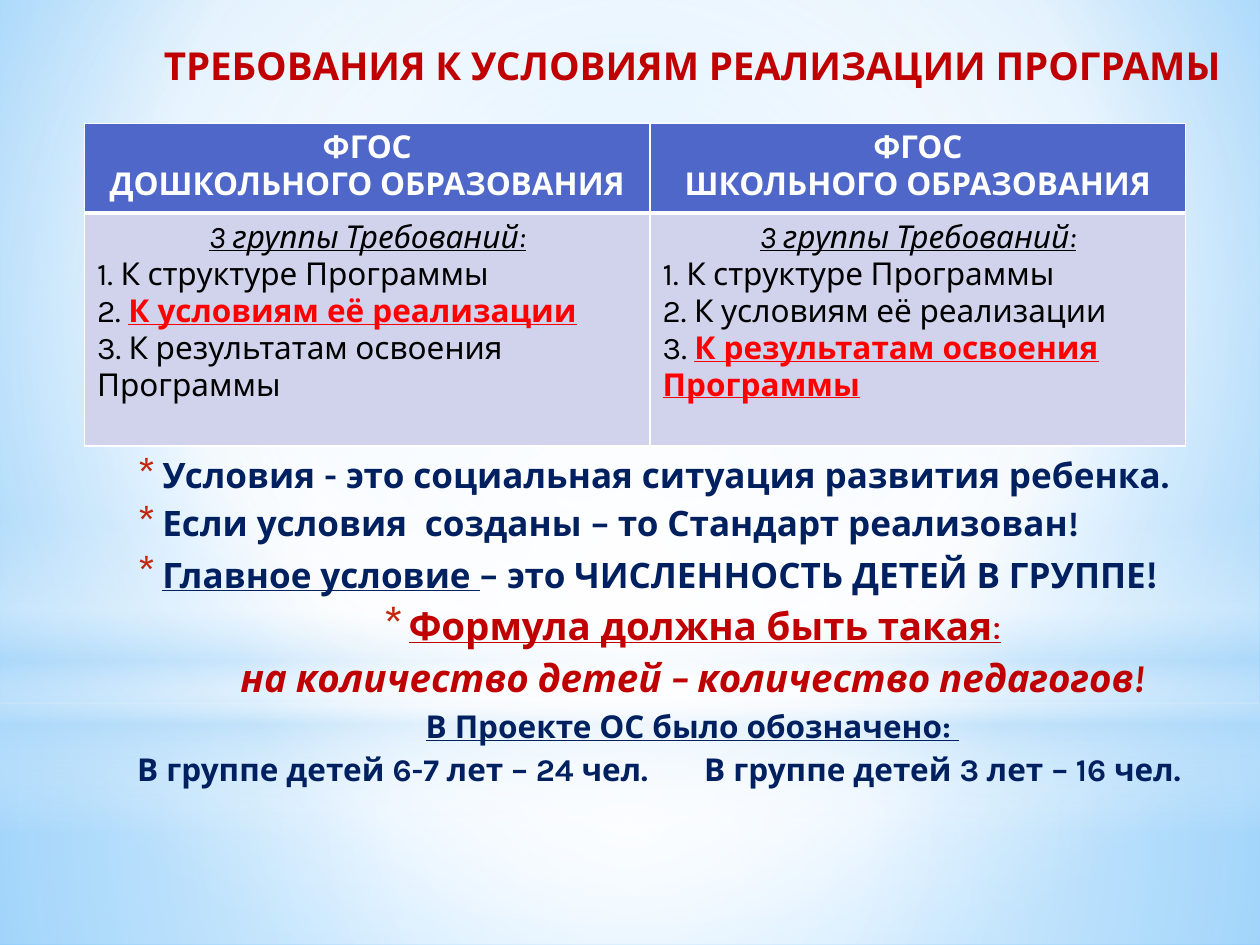
import dataclasses

import lxml.etree
import pptx
import pptx.dml.color
import pptx.enum.shapes
import pptx.enum.text
import pptx.oxml
import pptx.oxml.ns
import pptx.util

Inches = pptx.util.Inches
Pt = pptx.util.Pt
Align = pptx.enum.text.PP_ALIGN
Preset = pptx.enum.shapes.MSO_SHAPE
qn = pptx.oxml.ns.qn


@dataclasses.dataclass(frozen=True)
class Theme:
    font: str = "Karla"
    navy: str = "002060"
    crimson: str = "C00000"
    red: str = "FF0000"
    black: str = "000000"
    white: str = "FFFFFF"
    sky: str = "B4DCFA"
    bullet: str = "C3260C"
    header: str = "4E67C8"
    cell: str = "D0D3EB"
    title_size: int = 22
    body_size: int = 20
    small_size: int = 18


THEME = Theme()


def rgb(value):
    return pptx.dml.color.RGBColor.from_string(value)


def child(parent, tag, **attributes):
    return lxml.etree.SubElement(
        parent, qn(tag), {name: str(value) for name, value in attributes.items()})


def apply_gradient(fill, stops, focus=None):
    fill.gradient()
    gradient = fill._fill._gradFill
    for element in list(gradient):
        gradient.remove(element)
    stop_list = child(gradient, "a:gsLst")
    for position, color, alpha in stops:
        stop = child(stop_list, "a:gs", pos=position * 1000)
        color_element = child(stop, "a:srgbClr", val=color)
        if alpha < 100:
            child(color_element, "a:alpha", val=alpha * 1000)
    if focus:
        edges = {edge: value * 1000 for edge, value in zip("ltrb", focus)}
        child(child(gradient, "a:path", path="circle"), "a:fillToRect", **edges)
    else:
        child(gradient, "a:lin", ang=90 * 60000, scaled=0)


class SlideBuilder:
    def __init__(self, presentation, theme):
        self.theme = theme
        self.slide = presentation.slides.add_slide(presentation.slide_layouts[5])

    def background(self, stops, focus):
        apply_gradient(self.slide.background.fill, stops, focus)

    def glow(self, preset, top, height, stops, focus=(50, 50, 50, 50)):
        shape = self.slide.shapes.add_shape(
            preset, 0, Inches(top), Inches(10), Inches(height))
        shape.shadow.inherit = False
        shape.line.fill.background()
        apply_gradient(shape.fill, stops, focus)

    def set_text(self, paragraph, parts, size, color, align=Align.LEFT):
        paragraph.alignment = align
        paragraph.text = parts[0][0]
        for text, _ in parts[1:]:
            paragraph.add_run().text = text
        for run, (_, style) in zip(paragraph.runs, parts):
            font = run.font
            font.name = self.theme.font
            font.size = Pt(style.get("size", size))
            font.bold = style.get("bold", False)
            font.italic = style.get("italic", False)
            font.underline = style.get("underline", False)
            font.color.rgb = rgb(style.get("color", color))

    def title(self, text):
        shape = self.slide.shapes.title
        shape.left, shape.top = Inches(0.94), Inches(0.28)
        shape.width, shape.height = Inches(9.06), Inches(0.52)
        frame = shape.text_frame
        frame.vertical_anchor = pptx.enum.text.MSO_ANCHOR.TOP
        self.set_text(frame.paragraphs[0], [(text, {"bold": True})],
                      self.theme.title_size, self.theme.crimson, Align.CENTER)
        frame.paragraphs[0]._p.get_or_add_pPr().set("marL", str(Inches(0.05)))
        self.slide.shapes._spTree.append(shape._element)

    def body(self, top, height, lines):
        box = self.slide.shapes.add_textbox(
            Inches(0.94), Inches(top), Inches(9.06), Inches(height))
        frame = box.text_frame
        frame.word_wrap = True
        for index, (parts, size, color, align, bulleted) in enumerate(lines):
            paragraph = frame.add_paragraph() if index else frame.paragraphs[0]
            self.set_text(paragraph, parts, size, color, align)
            paragraph.space_after = Pt(3.5)
            properties = paragraph._p.get_or_add_pPr()
            properties.set("marL", str(Inches(0.25 if bulleted else 0.05)))
            properties.set("indent", str(Inches(-0.2 if bulleted else 0)))
            if bulleted:
                child(child(properties, "a:buClr"), "a:srgbClr", val=self.theme.bullet)
                child(properties, "a:buSzPct", val=130000)
                child(properties, "a:buFont", typeface=self.theme.font)
                child(properties, "a:buChar", char="*")
            else:
                child(properties, "a:buNone")
                tabs = child(properties, "a:tabLst")
                child(tabs, "a:tab", pos=Inches(4.49), algn="l")

    def table(self, left, top, widths, heights, rows):
        table = self.slide.shapes.add_table(
            len(rows), len(widths), Inches(left), Inches(top),
            Inches(sum(widths)), Inches(sum(heights))).table
        for column, width in zip(table.columns, widths):
            column.width = Inches(width)
        for row, height in zip(table.rows, heights):
            row.height = Inches(height)
        for row_index, row in enumerate(rows):
            is_header = row_index == 0
            for column_index, lines in enumerate(row):
                cell = table.cell(row_index, column_index)
                self.cell_borders(cell, 3 if is_header else 1, 1 if is_header else 3)
                cell.fill.solid()
                cell.fill.fore_color.rgb = rgb(
                    self.theme.header if is_header else self.theme.cell)
                frame = cell.text_frame
                for index, parts in enumerate(lines):
                    paragraph = frame.add_paragraph() if index else frame.paragraphs[0]
                    centered = is_header or index == 0
                    self.set_text(paragraph, parts, self.theme.small_size,
                                  self.theme.white if is_header else self.theme.black,
                                  Align.CENTER if centered else Align.LEFT)

    def cell_borders(self, cell, bottom, top):
        properties = cell._tc.get_or_add_tcPr()
        for side, width in (("L", 1), ("R", 1), ("T", top), ("B", bottom)):
            line = child(properties, f"a:ln{side}", w=Pt(width))
            child(child(line, "a:solidFill"), "a:srgbClr", val=self.theme.white)


def main():
    theme = THEME
    presentation = pptx.Presentation()
    presentation.slide_width, presentation.slide_height = Inches(10), Inches(7.5)
    builder = SlideBuilder(presentation, theme)
    white, sky = theme.white, theme.sky

    builder.background([(0, "9ED5FF", 100), (60, white, 100), (100, "5BB9FF", 100)],
                       (20, 10, 20, 60))
    builder.glow(Preset.RECTANGLE, 5.58, 1.92,
                 [(0, white, 91), (37, white, 76), (100, sky, 79)])
    builder.glow(Preset.RECTANGLE, 0, 5.58,
                 [(0, white, 89), (48, white, 62), (100, sky, 79)])
    builder.glow(Preset.RECTANGLE, 4.12, 2.5,
                 [(0, white, 0), (29, white, 30), (45, sky, 40),
                  (55, white, 26), (65, sky, 60), (100, white, 0)], None)
    builder.glow(Preset.OVAL, 1.75, 5.58, [(0, white, 100), (56, white, 0)])

    builder.title("ТРЕБОВАНИЯ К УСЛОВИЯМ РЕАЛИЗАЦИИ ПРОГРАМЫ")

    plain, bold = {}, {"bold": True}
    underlined = {"bold": True, "underline": True}
    accent = {**underlined, "color": theme.red}
    heading = [("3 группы Требований:", {"italic": True, "underline": True})]
    structure = [("1. К структуре Программы", plain)]
    conditions, results = "К условиям её реализации", "К результатам освоения Программы"
    builder.table(0.67, 0.98, (4.49, 4.25), (0.71, 1.85), [
        [[[("ФГОС", bold)], [(f"{level} ОБРАЗОВАНИЯ", bold)]]
         for level in ("ДОШКОЛЬНОГО", "ШКОЛЬНОГО")],
        [[heading, structure, [("2. ", plain), (conditions, accent)],
          [(f"3. {results}", plain)]],
         [heading, structure, [(f"2. {conditions}", plain)],
          [("3. ", plain), (results, accent)]]],
    ])

    large, medium, small = theme.title_size, theme.body_size, theme.small_size
    builder.body(3.55, 3.3, [
        ([("Условия - это социальная ситуация развития ребенка.", bold)],
         medium, theme.navy, Align.LEFT, True),
        ([("Если условия  созданы – то Стандарт реализован!", bold)],
         medium, theme.navy, Align.LEFT, True),
        ([("Главное условие ", underlined), ("– это ЧИСЛЕННОСТЬ ДЕТЕЙ В ГРУППЕ", bold),
          ("!", {"bold": True, "size": large})], medium, theme.navy, Align.LEFT, True),
        ([("Формула должна быть такая", underlined), (":", {"underline": True})],
         large, theme.crimson, Align.CENTER, True),
        ([("на количество детей – количество педагогов!", {"bold": True, "italic": True})],
         large, theme.crimson, Align.CENTER, False),
        ([("В Проекте ОС было обозначено: ", underlined)],
         small, theme.navy, Align.CENTER, False),
        ([("В группе детей 6-7 лет – 24 чел.\tВ группе детей 3 лет – 16 чел.", bold)],
         small, theme.navy, Align.LEFT, False),
    ])
    presentation.save("out.pptx")


if __name__ == "__main__":
    main()
